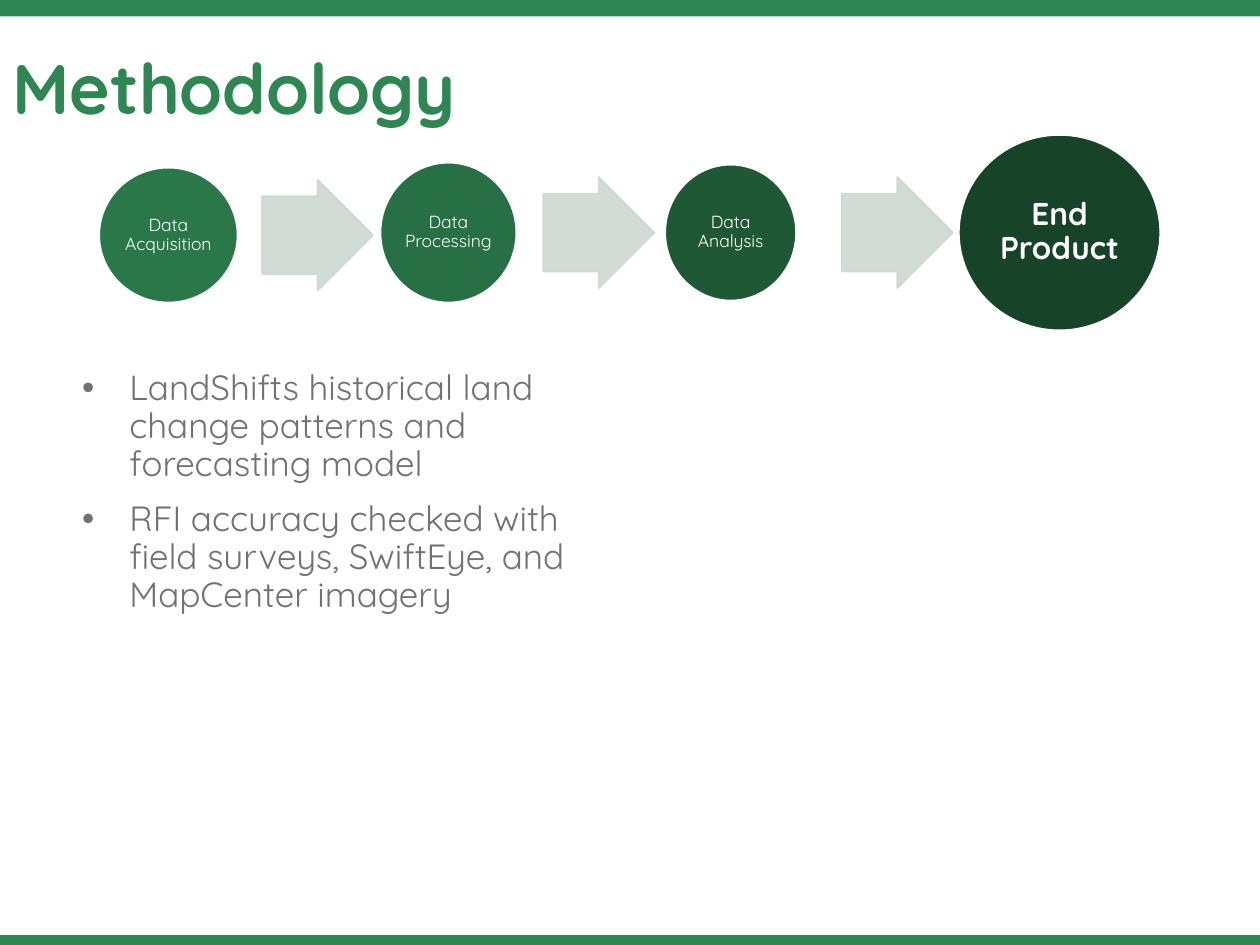
import lxml.etree
import pptx
import pptx.dml.color
import pptx.enum.shapes
import pptx.enum.text
import pptx.oxml.ns
import pptx.util

Cm, Pt = pptx.util.Cm, pptx.util.Pt
SHAPE = pptx.enum.shapes.MSO_SHAPE
ALIGN = pptx.enum.text.PP_ALIGN
ANCHOR = pptx.enum.text.MSO_ANCHOR
NO_FIT = pptx.enum.text.MSO_AUTO_SIZE.NONE

SLIDE_W, SLIDE_H = 25.4, 19.05
FONT = "Quicksand"
COLORS = {
    "green": "2E8652",
    "text": "767171",
    "white": "FFFFFF",
    "arrow": "CDD9D1",
    "acquisition": "2A784A",
    "processing": "276F44",
    "analysis": "1E5835",
    "product": "174329",
}

# label, colour, left, drop below the axis, width, height, font size, bold
STEPS = [
    ("Data Acquisition", "acquisition", 0, 0.05, 2.79, 2.72, 10, False),
    ("Data Processing", "processing", 5.67, 0, 2.74, 2.82, 10, False),
    ("Data Analysis", "analysis", 11.41, 0, 2.64, 2.74, 10, False),
    ("End Product", "product", 17.33, 0, 4.06, 3.94, 18, True),
]
# left, drop below the axis
ARROWS = [(3.28, 0.05), (8.95, 0), (14.97, 0)]
ARROW_SIZE = 2.24
FINDINGS = [
    "LandShifts historical land change patterns and forecasting model",
    "RFI accuracy checked with field surveys, SwiftEye, and MapCenter imagery",
]


def rgb(color):
    return pptx.dml.color.RGBColor.from_string(COLORS[color])


def apply(target, values):
    for name, value in values.items():
        setattr(target, name, value)


def place(shape, box):
    apply(shape, dict(zip(("left", "top", "width", "height"), map(Cm, box))))


def write(paragraph, text, size, color, bold=False, **layout):
    run = paragraph.add_run()
    run.text = text
    apply(run.font, {"name": FONT, "size": Pt(size), "bold": bold})
    run.font.color.rgb = rgb(color)
    apply(paragraph, {"line_spacing": 0.9, **layout})


def add_filled(slide, preset, box, color, outline=None):
    shape = slide.shapes.add_shape(preset, *map(Cm, box))
    shape.shadow.inherit = False
    shape.fill.solid()
    shape.fill.fore_color.rgb = rgb(color)
    if outline:
        shape.line.color.rgb = rgb(outline)
        shape.line.width = Pt(1)
    else:
        shape.line.fill.background()
    return shape


def set_opacity(shape, percent):
    qn = pptx.oxml.ns.qn
    for color in shape.element.spPr.iter(qn("a:srgbClr")):
        lxml.etree.SubElement(color, qn("a:alpha"), val=str(percent * 1000))


def build_bars(slide, box):
    left, top, width, height = box
    top_bar, bottom_bar = 0.33, 0.2
    add_filled(slide, SHAPE.RECTANGLE, (left, top, width, top_bar), "green")
    add_filled(slide, SHAPE.RECTANGLE,
               (left, top + height - bottom_bar, width, bottom_bar), "green")


def build_title(slide, box):
    title = slide.shapes.title
    place(title, box)
    apply(title.text_frame, {"auto_size": NO_FIT, "word_wrap": True,
                             "vertical_anchor": ANCHOR.BOTTOM,
                             "margin_bottom": Cm(1.63)})
    write(title.text_frame.paragraphs[0], "Methodology", 40, "green", True,
          alignment=ALIGN.LEFT)


def build_findings(slide, box):
    body = slide.placeholders[1]
    place(body, box)
    frame = body.text_frame
    apply(frame, {"auto_size": NO_FIT, "word_wrap": True})
    for index, finding in enumerate(FINDINGS):
        paragraph = frame.add_paragraph() if index else frame.paragraphs[0]
        write(paragraph, finding, 20, "text", space_before=Pt(10))


def build_flow(slide, box):
    left, top, _, height = box
    axis = top + height / 2

    # Arrows between the steps
    for x, drop in ARROWS:
        arrow = add_filled(
            slide, SHAPE.RIGHT_ARROW,
            (left + x, axis + drop - ARROW_SIZE / 2, ARROW_SIZE, ARROW_SIZE),
            "arrow", "arrow")
        arrow.adjustments[0] = 0.7
        set_opacity(arrow, 90)

    # Step circles
    for label, color, x, drop, step_w, step_h, size, bold in STEPS:
        circle = add_filled(
            slide, SHAPE.OVAL,
            (left + x, axis + drop - step_h / 2, step_w, step_h),
            color, "white")
        frame = circle.text_frame
        apply(frame, {"word_wrap": True, "vertical_anchor": ANCHOR.MIDDLE})
        apply(frame, {f"margin_{side}": Cm(0.03)
                      for side in ("left", "top", "right", "bottom")})
        write(frame.paragraphs[0], label, size, "white", bold,
              alignment=ALIGN.CENTER)


def main():
    deck = pptx.Presentation()
    apply(deck, {"slide_width": Cm(SLIDE_W), "slide_height": Cm(SLIDE_H)})
    slide = deck.slides.add_slide(deck.slide_layouts[1])

    build_bars(slide, (0, 0, SLIDE_W, SLIDE_H))
    build_findings(slide, (1.4, 7.34, 11.51, 9.37))
    build_flow(slide, (2, 2.72, 21.39, 3.94))
    build_title(slide, (0, 0.56, 9.91, 3.68))

    deck.save("out.pptx")


if __name__ == "__main__":
    main()
